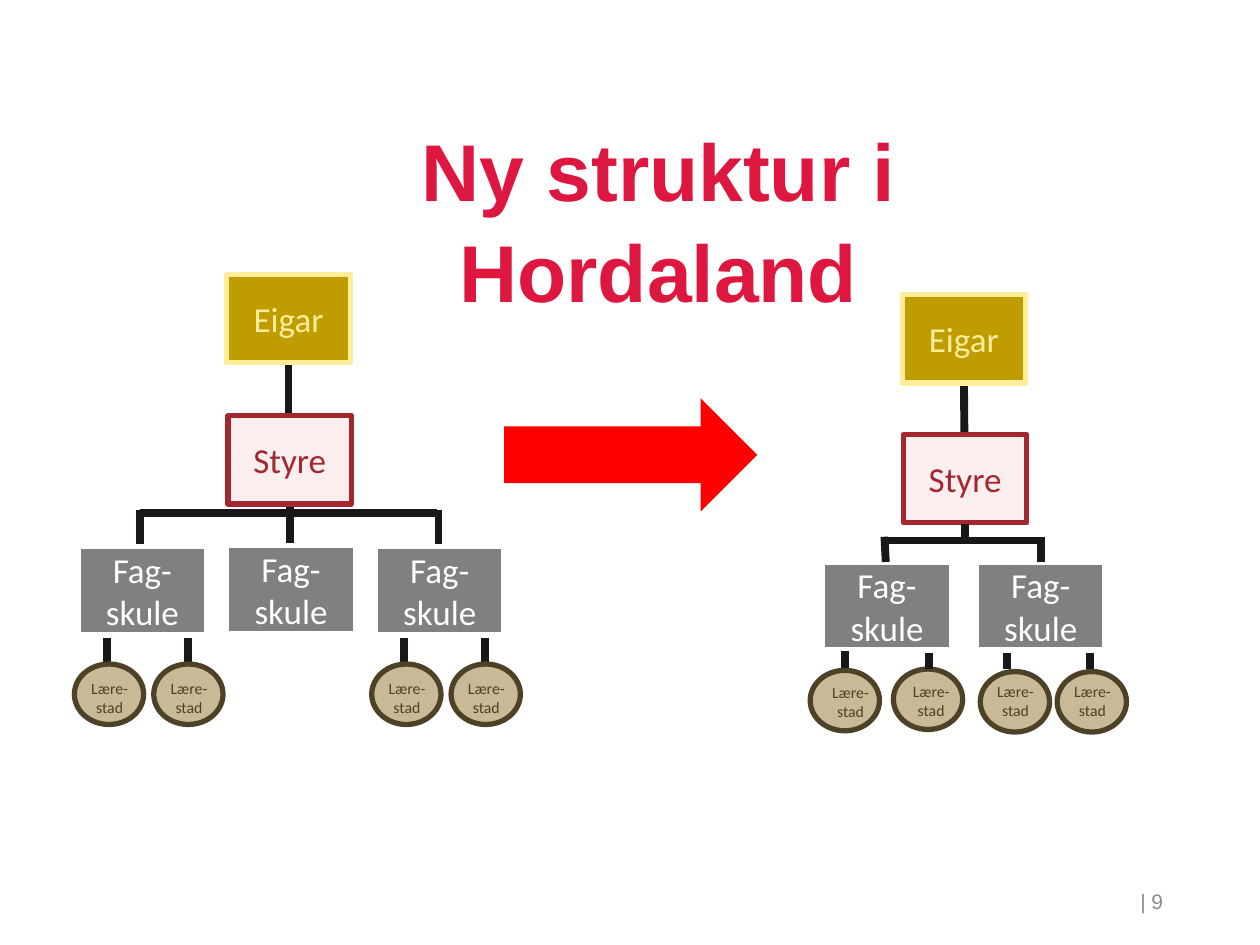
import pptx
import pptx.util
import pptx.dml.color
import pptx.enum.shapes
import pptx.enum.text
from lxml import etree
from pptx.util import Inches, Pt
from pptx.dml.color import RGBColor
from pptx.enum.shapes import MSO_CONNECTOR, MSO_SHAPE
from pptx.enum.text import MSO_ANCHOR, MSO_AUTO_SIZE, PP_ALIGN

CRIMSON = RGBColor(0xDD, 0x17, 0x40)
GREY_TEXT = RGBColor(0x8B, 0x8B, 0x8B)
INK = RGBColor(0x1A, 0x17, 0x1B)
GOLD = RGBColor(0xBF, 0x9D, 0x00)
PALE_GOLD = RGBColor(0xFF, 0xED, 0x99)
PINK = RGBColor(0xFB, 0xEE, 0xEF)
DARK_RED = RGBColor(0xA4, 0x27, 0x2F)
GREY = RGBColor(0x80, 0x80, 0x80)
WHITE = RGBColor(0xFF, 0xFF, 0xFF)
SAND = RGBColor(0xC9, 0xBA, 0x97)
BROWN = RGBColor(0x4D, 0x42, 0x28)
RED = RGBColor(0xFF, 0x00, 0x00)

# Content: label, width, height, fill, and colour of outline and text
OWNER = ("Eigar", 0.98, 0.7, GOLD, PALE_GOLD)
BOARD = ("Styre", 0.98, 0.7, PINK, DARK_RED)
SCHOOL = ("Fag-skule", 1.02, 0.7, GREY, WHITE)
SITE_LABEL = "Lære-\nstad"
SITE_SIZE = (0.55, 0.48)

# Each structure: boxes (kind, left, top), sites (left, top, label left,
# label top, label width), and lines (x1, y1, x2, y2) behind or in front
BEFORE = {
    "boxes": [(OWNER, 1.8, 2.18), (BOARD, 1.81, 3.3), (SCHOOL, 1.8, 4.33),
              (SCHOOL, 0.62, 4.34), (SCHOOL, 2.98, 4.34)],
    "sites": [(left, 5.27, left + 0.03, 5.34, 0.5)
              for left in (2.95, 3.58, 0.59, 1.22)],
    "behind": [(2.3, 3.91, 2.3, 4.48), (2.29, 2.83, 2.29, 3.4),
               (1.11, 4.05, 1.11, 4.62), (3.48, 4.05, 3.48, 4.62),
               (1.11, 4.07, 2.31, 4.07), (2.27, 4.07, 3.47, 4.07)]
              + [(x, 4.79, x, 5.36) for x in (3.21, 3.85, 0.85, 1.49)],
    "front": [],
}
AFTER = {
    "boxes": [(OWNER, 7.16, 2.34), (BOARD, 7.17, 3.45),
              (SCHOOL, 6.53, 4.46), (SCHOOL, 7.75, 4.46)],
    "sites": [(7.78, 5.33, 7.81, 5.36, 0.5), (8.39, 5.33, 8.42, 5.36, 0.5),
              (6.43, 5.32, 6.46, 5.37, 0.58), (7.09, 5.31, 7.14, 5.36, 0.5)],
    "behind": [(7.65, 2.98, 7.66, 4.15), (7.04, 4.29, 8.26, 4.29)],
    "front": [(6.71, 5.17, 6.71, 5.3), (7.02, 4.26, 7.03, 4.46),
              (8.26, 4.26, 8.26, 4.46), (7.66, 4.16, 7.66, 4.29)]
             + [(x, 5.18, x, 5.31) for x in (8.65, 7.37, 7.99)],
}


def write(box, text, size, color, font="Calibri", bold=False,
          align=PP_ALIGN.CENTER, anchor=MSO_ANCHOR.MIDDLE, wrap=True, spacing=None):
    frame = box.text_frame
    frame.auto_size = MSO_AUTO_SIZE.NONE
    frame.word_wrap = wrap
    frame.vertical_anchor = anchor
    frame.text = text
    for para in frame.paragraphs:
        para.alignment = align
        para.line_spacing = spacing
        for span in para.runs:
            span.font.name = font
            span.font.size = Pt(size)
            span.font.bold = bold
            span.font.color.rgb = color
    return frame


def add_line(shapes, x1, y1, x2, y2):
    line = shapes.add_connector(MSO_CONNECTOR.STRAIGHT, *map(Inches, (x1, y1, x2, y2)))
    line.line.color.rgb = INK
    line.line.width = Pt(4.5)
    properties = line._element.spPr
    etree.SubElement(properties, pptx.oxml.ns.qn("a:effectLst"))


def add_form(shapes, preset, left, top, width, height, fill, outline=None):
    form = shapes.add_shape(preset, *map(Inches, (left, top, width, height)))
    form.shadow.inherit = False
    form.fill.solid()
    form.fill.fore_color.rgb = fill
    if outline is None:
        form.line.fill.background()
    else:
        form.line.color.rgb = outline
        form.line.width = Pt(3)
    return form


def add_structure(page, structure):
    shapes = page.shapes.add_group_shape().shapes
    for ends in structure["behind"]:
        add_line(shapes, *ends)
    for left, top, label_left, label_top, label_width in structure["sites"]:
        add_form(shapes, MSO_SHAPE.OVAL, left, top, *SITE_SIZE, SAND, BROWN)
        label = shapes.add_textbox(*map(Inches, (label_left, label_top, label_width, 0.4)))
        write(label, SITE_LABEL, size=9, color=BROWN, anchor=MSO_ANCHOR.TOP,
              wrap=label_width > 0.5)
    for (text, width, height, fill, accent), left, top in structure["boxes"]:
        box = add_form(shapes, MSO_SHAPE.RECTANGLE, left, top, width, height, fill, accent)
        write(box, text, size=20, color=accent)
    for ends in structure["front"]:
        add_line(page.shapes, *ends)


def main():
    deck = pptx.Presentation()
    deck.slide_width, deck.slide_height = Inches(10), Inches(7.5)
    page = deck.slides.add_slide(deck.slide_layouts[5])

    # Title
    title = page.shapes.title
    title.left, title.top = Inches(2.86), Inches(0.92)
    title.width, title.height = Inches(4.73), Inches(0.67)
    frame = write(title, "Ny struktur i Hordaland", size=46, color=CRIMSON, font="Arial",
                  bold=True, anchor=MSO_ANCHOR.TOP, spacing=1.05)
    frame.margin_top = frame.margin_bottom = 0

    # Page number
    number = page.shapes.add_textbox(*map(Inches, (8.54, 6.95, 0.79, 0.4)))
    write(number, "| 9", size=12, color=GREY_TEXT, font="Arial", align=PP_ALIGN.RIGHT)

    # Old structure, arrow, new structure
    add_structure(page, BEFORE)
    add_form(page.shapes, MSO_SHAPE.RIGHT_ARROW, 4, 3.16, 2.01, 0.9, RED)
    add_structure(page, AFTER)

    deck.save("out.pptx")


if __name__ == "__main__":
    main()
